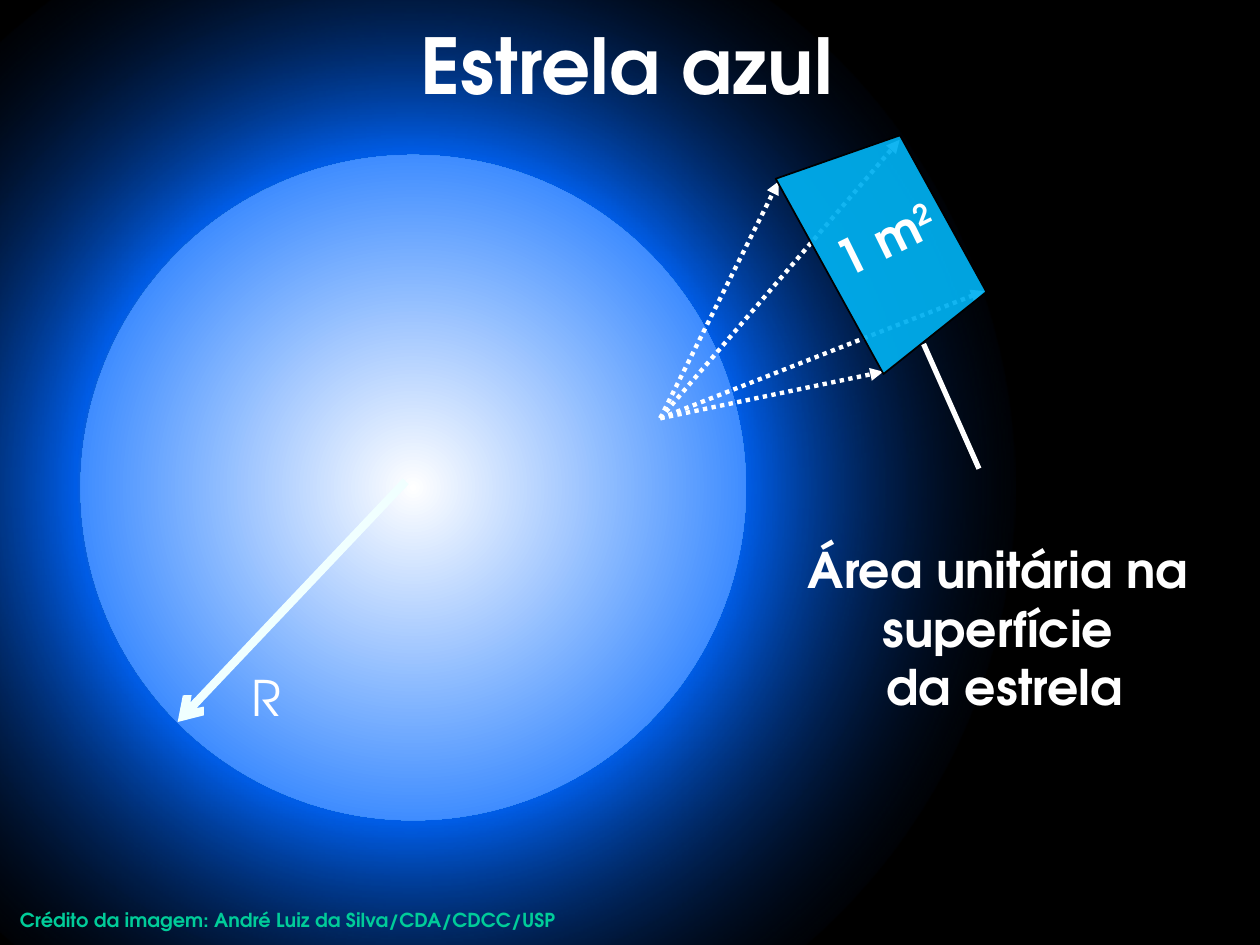
from dataclasses import dataclass

from lxml.etree import SubElement
from pptx import Presentation
from pptx.dml.color import RGBColor
from pptx.enum.dml import MSO_LINE
from pptx.enum.shapes import MSO_CONNECTOR, MSO_SHAPE
from pptx.enum.text import MSO_ANCHOR, MSO_AUTO_SIZE, PP_ALIGN
from pptx.oxml import parse_xml
from pptx.oxml.ns import nsdecls, qn
from pptx.util import Inches, Pt

FONT = "TeX Gyre Adventor"
WHITE = "FFFFFF"
COLUMNS, ROWS = 100, 75
CELL = Inches(10) / COLUMNS


@dataclass
class Box:
    """A rectangle measured in grid columns and rows."""
    left: float
    top: float
    width: float
    height: float

    def inner(self, left, top, width, height):
        """Return a box offset from this one."""
        return Box(self.left + left, self.top + top, width, height)

    def point(self, column, row):
        """Return a point of this box in slide units."""
        return round((self.left + column) * CELL), round((self.top + row) * CELL)

    def frame(self):
        """Return left, top, width and height in slide units."""
        return *self.point(0, 0), round(self.width * CELL), round(self.height * CELL)


def color(code):
    """Turn a hex string into a colour."""
    return RGBColor.from_string(code)


def add_text(shapes, box, lines, size, bold=True, align=PP_ALIGN.CENTER, code=WHITE):
    """Add a text box; each line is a list of (text, baseline) runs."""
    label = shapes.add_textbox(*box.frame())
    frame = label.text_frame
    frame.word_wrap = True
    frame.auto_size = MSO_AUTO_SIZE.SHAPE_TO_FIT_TEXT
    for index, line in enumerate(lines):
        para = frame.add_paragraph() if index else frame.paragraphs[0]
        para.alignment = align
        for text, baseline in line:
            span = para.add_run()
            span.text = text
            span.font.name, span.font.size, span.font.bold = FONT, Pt(size), bold
            span.font.color.rgb = color(code)
            if baseline:
                span._r.get_or_add_rPr().set("baseline", str(baseline * 1000))
    return label


def add_line(shapes, start, end, width, code=WHITE, dash=None, head=None):
    """Add a straight line with an optional arrowhead at its end."""
    line = shapes.add_connector(MSO_CONNECTOR.STRAIGHT, *start, *end)
    line.line.color.rgb = color(code)
    line.line.width = Pt(width)
    if dash:
        line.line.dash_style = dash
    properties = line._element.spPr
    if head:
        SubElement(properties.find(qn("a:ln")), qn("a:tailEnd"), type=head)
    SubElement(properties, qn("a:effectLst"))


def add_glow(shapes, box, stops):
    """Add a circle with a radial gradient of (position, colour, opacity) stops."""
    circle = shapes.add_shape(MSO_SHAPE.OVAL, *box.frame())
    circle.shadow.inherit = False
    circle.line.fill.background()
    marks = "".join(
        f'<a:gs pos="{position * 1000}"><a:srgbClr val="{code}">'
        f'<a:alpha val="{opacity * 1000}"/></a:srgbClr></a:gs>'
        for position, code, opacity in stops)
    gradient = parse_xml(
        f'<a:gradFill {nsdecls("a")} rotWithShape="1"><a:gsLst>{marks}</a:gsLst>'
        '<a:path path="circle"><a:fillToRect l="50000" t="50000" r="50000" b="50000"/>'
        '</a:path></a:gradFill>')
    circle._element.spPr.find(qn("a:prstGeom")).addnext(gradient)


def add_star(page, box):
    """Draw the halo, the disc and its radius."""
    add_glow(page.shapes, box, [(30, WHITE, 0), (39, "005EE9", 100), (77, "000000", 0)])
    add_glow(page.shapes, box.inner(21.8, 21.6, 52.8, 52.8),
             [(0, WHITE, 100), (75, "3486FF", 100), (97, "69D8FF", 100)])
    add_text(page.shapes, box.inner(32.9, 61.8, 7.2, 5.7), [[("R", 0)]], 28, bold=False)
    add_line(page.shapes, box.point(47.6, 47.5), box.point(29.5, 66.6), 4.75,
             "F0FFFF", head="arrow")


def add_title(page, box):
    """Write the slide title."""
    title = add_text(page.shapes, box, [[("Estrela azul", 0)]], 44)
    title.text_frame.auto_size = MSO_AUTO_SIZE.NONE
    title.text_frame.vertical_anchor = MSO_ANCHOR.MIDDLE


def add_caption(page, box):
    """Write the caption and its pointer to the unit area."""
    lines = ["Área unitária na ", "superfície ", "da estrela"]
    add_text(page.shapes, box.inner(0, 15, box.width, 15.1),
             [[(line, 0)] for line in lines], 28)
    add_line(page.shapes, box.point(15.6, 9.9), box.point(11.2, 0), 3)


def add_credit(page, box):
    """Write the image credit."""
    text = "Crédito da imagem: André Luiz da Silva/CDA/CDCC/USP"
    add_text(page.shapes, box, [[(text, 0)]], 11, align=PP_ALIGN.LEFT, code="00CC99")


def add_unit_area(page, box):
    """Draw the rays and the square metre that they reach."""
    shapes = page.shapes.add_group_shape().shapes
    for corner in [(19, 0), (25.7, 12), (17.7, 18.4), (9.4, 3.3)]:
        add_line(shapes, box.point(0, 22.1), box.point(*corner), 2.5,
                 dash=MSO_LINE.ROUND_DOT, head="triangle")
    area = shapes.add_shape(MSO_SHAPE.TRAPEZOID, *box.inner(9.1, 3.2, 17.7, 10.3).frame())
    area.adjustments[0] = 0.17
    area.rotation = 61.1
    area.shadow.inherit = False
    area.fill.solid()
    area.fill.fore_color.rgb = color("00B0F0")
    SubElement(area._element.spPr.find(qn("a:solidFill"))[0], qn("a:alpha"), val="93000")
    area.line.color.rgb = color("000000")
    area.line.width = Pt(1)
    label = add_text(shapes, box.inner(11.8, 5, 12.1, 5.7), [[("1 m", 0), ("2", 30)]], 28)
    label.rotation = 333.8


def main():
    """Build and save the deck."""
    deck = Presentation()
    deck.slide_width, deck.slide_height = round(COLUMNS * CELL), round(ROWS * CELL)
    page = deck.slides.add_slide(deck.slide_layouts[6])
    page.background.fill.solid()
    page.background.fill.fore_color.rgb = color("000000")
    add_star(page, Box(-15.4, -9.3, 96, 96))
    add_title(page, Box(2.1, 0.7, 95.3, 8.7))
    add_caption(page, Box(62.1, 27.3, 35.3, 30.1))
    add_credit(page, Box(0.6, 71.6, 98.8, 2.9))
    add_unit_area(page, Box(52.4, 11.1, 25.7, 22.3))
    deck.save("out.pptx")


if __name__ == "__main__":
    main()
